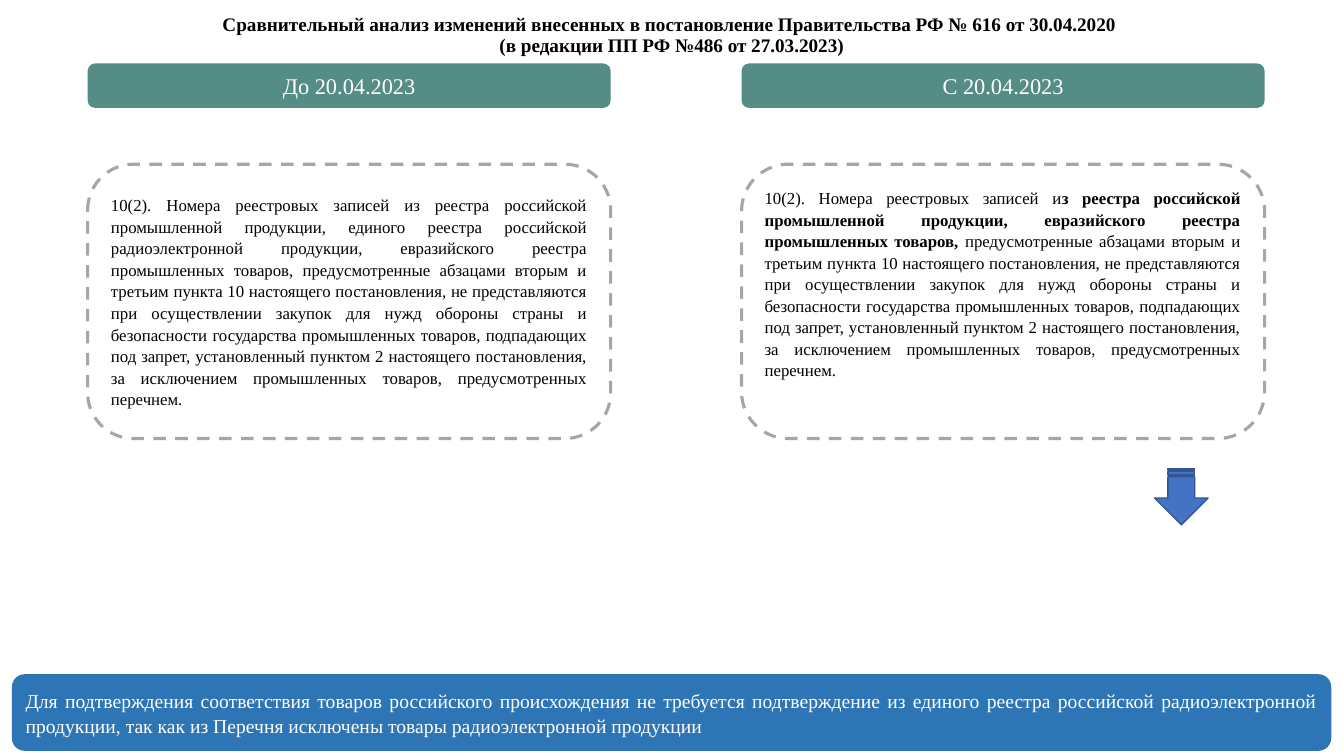
from pptx import Presentation
from pptx.dml.color import RGBColor
from pptx.enum.dml import MSO_LINE_DASH_STYLE as Dash
from pptx.enum.shapes import MSO_SHAPE as Preset
from pptx.enum.text import MSO_ANCHOR as Anchor, MSO_AUTO_SIZE as AutoSize, PP_ALIGN as Align
from pptx.util import Cm, Pt

FONT = "Times New Roman"
BLACK, WHITE, GREY = "000000", "FFFFFF", "A6A6A6"
TEAL, BLUE, ARROW, ARROW_EDGE = "568C86", "2E75B6", "4472C4", "325491"

# The two columns share a width and differ only in their left edge
BEFORE_LEFT, AFTER_LEFT, COLUMN_WIDTH = 2.21, 18.69, 13.18

TITLE = [
    ["Сравнительный анализ изменений внесенных в постановление Правительства РФ № 616 от 30.04.2020 "],
    ["(в редакции ПП РФ №486 от 27.03.2023)"],
]
COMMON_ENDING = (
    " предусмотренные абзацами вторым и третьим пункта 10 настоящего постановления, "
    "не представляются при осуществлении закупок для нужд обороны страны и безопасности "
    "государства промышленных товаров, подпадающих под запрет, установленный пунктом 2 "
    "настоящего постановления, за исключением промышленных товаров, предусмотренных перечнем."
)
RULE_BEFORE = (
    "10(2). Номера реестровых записей из реестра российской промышленной продукции, "
    "единого реестра российской радиоэлектронной продукции, евразийского реестра "
    "промышленных товаров," + COMMON_ENDING
)
RULE_AFTER = [
    "10(2). Номера реестровых записей и",
    ("з реестра российской промышленной продукции, евразийского реестра промышленных товаров,", True),
    COMMON_ENDING,
]
CONCLUSION = (
    "Для подтверждения соответствия товаров российского происхождения не требуется "
    "подтверждение из единого реестра российской радиоэлектронной продукции, так как "
    "из Перечня исключены товары радиоэлектронной продукции"
)


def rgb(color):
    return RGBColor.from_string(color)


def write(shape, paragraphs, size, color=BLACK, align=Align.JUSTIFY,
          spacing=1.07, anchor=Anchor.MIDDLE, bold=False):
    """Each paragraph is a list of runs: plain text or (text, bold)."""
    frame = shape.text_frame
    frame.word_wrap = True
    frame.vertical_anchor = anchor
    for index, runs in enumerate(paragraphs):
        paragraph = frame.add_paragraph() if index else frame.paragraphs[0]
        paragraph.alignment = align
        paragraph.line_spacing = spacing
        for item in runs:
            text, is_bold = (item, bold) if isinstance(item, str) else item
            run = paragraph.add_run()
            run.text = text
            run.font.name = FONT
            run.font.size = Pt(size)
            run.font.bold = is_bold
            run.font.color.rgb = rgb(color)


def add_figure(slide, preset, left, top, width, height, fill=None, line=None, weight=1):
    figure = slide.shapes.add_shape(preset, Cm(left), Cm(top), Cm(width), Cm(height))
    figure.shadow.inherit = False
    if fill:
        figure.fill.solid()
        figure.fill.fore_color.rgb = rgb(fill)
    else:
        figure.fill.background()
    if line:
        figure.line.color.rgb = rgb(line)
        figure.line.width = Pt(weight)
    else:
        figure.line.fill.background()
    return figure


def add_heading(slide, left, text):
    heading = add_figure(slide, Preset.ROUNDED_RECTANGLE, left, 1.6, COLUMN_WIDTH, 1.12, TEAL)
    write(heading, [[text]], 16, WHITE, align=Align.CENTER, spacing=1.0)


def add_frame(slide, left):
    frame = add_figure(slide, Preset.ROUNDED_RECTANGLE, left, 4.14, COLUMN_WIDTH, 6.91,
                       line=GREY, weight=2.25)
    frame.line.dash_style = Dash.DASH
    return frame


def add_text(slide, left, top, width, height, paragraphs, size, **style):
    box = slide.shapes.add_textbox(Cm(left), Cm(top), Cm(width), Cm(height))
    write(box, paragraphs, size, **style)
    return box


def main():
    deck = Presentation()
    deck.slide_width, deck.slide_height = Cm(33.87), Cm(19.05)
    slide = deck.slides.add_slide(deck.slide_layouts[6])

    # Dashed frames for the two versions of the rule
    before_frame = add_frame(slide, BEFORE_LEFT)
    write(before_frame, [[RULE_BEFORE]], 12)
    after_frame = add_frame(slide, AFTER_LEFT)
    after_frame.adjustments[0] = 0.17

    # Column headings
    add_heading(slide, BEFORE_LEFT, "До 20.04.2023")
    add_heading(slide, AFTER_LEFT, "С 20.04.2023")

    # Conclusion bar and the arrow leading to it
    conclusion = add_figure(slide, Preset.ROUNDED_RECTANGLE, 0.3, 16.99, 33.25, 1.93, BLUE)
    write(conclusion, [[CONCLUSION]], 14, WHITE)
    arrow = add_figure(slide, Preset.STRIPED_RIGHT_ARROW, 29.06, 11.84, 1.42, 1.35,
                       ARROW, ARROW_EDGE)
    arrow.rotation = 90

    # Title and the new wording
    add_text(slide, 0.84, 0, 32.18, 1.55, TITLE, 13.7, align=Align.CENTER,
             spacing=0.9, anchor=Anchor.BOTTOM, bold=True)
    after_rule = add_text(slide, 19.02, 4.57, 12.5, 5.59, [RULE_AFTER], 12, anchor=Anchor.TOP)
    after_rule.text_frame.auto_size = AutoSize.SHAPE_TO_FIT_TEXT

    deck.save("out.pptx")


if __name__ == "__main__":
    main()
